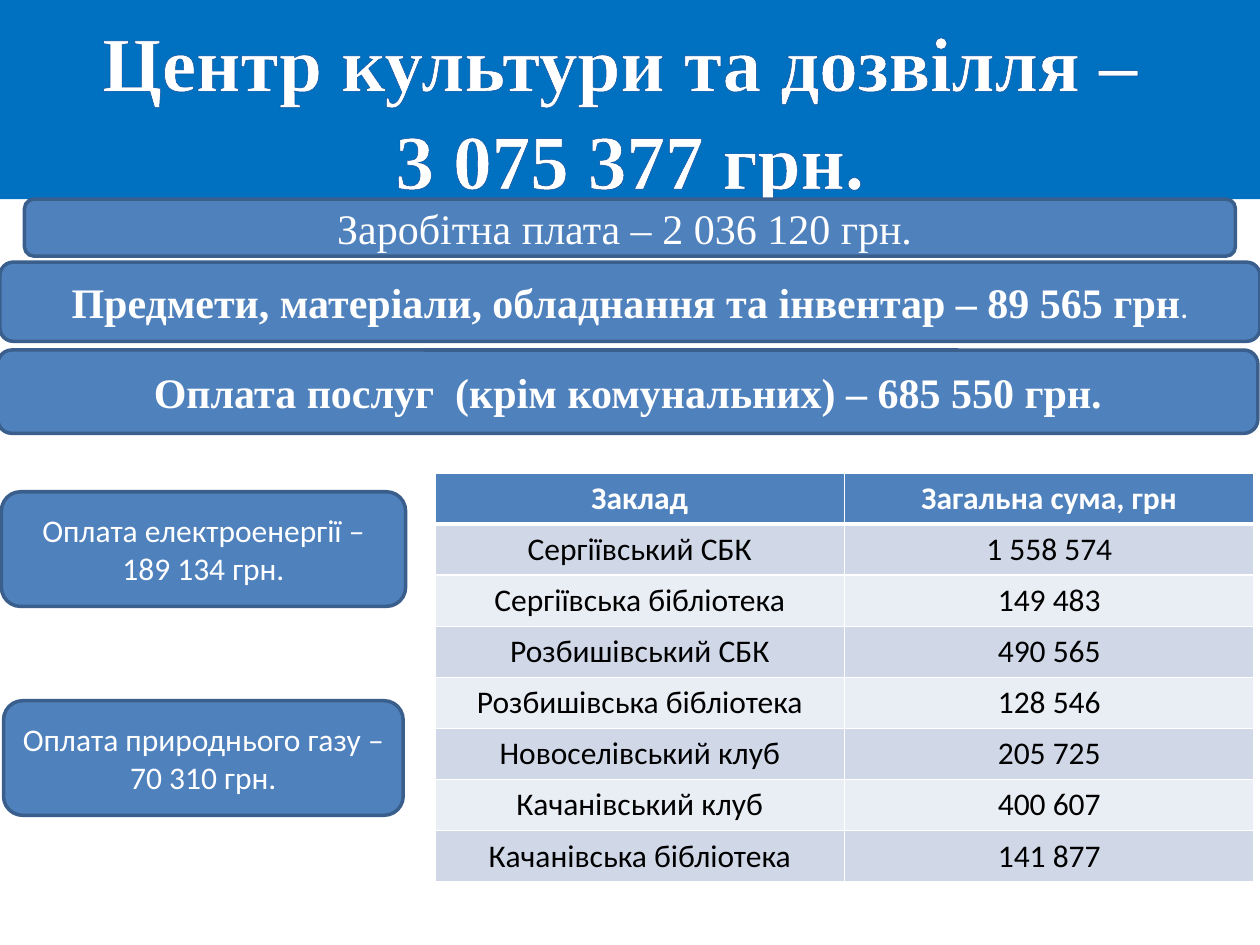
from pptx import Presentation
from pptx.dml.color import RGBColor
from pptx.enum.shapes import MSO_SHAPE
from pptx.enum.text import MSO_ANCHOR, MSO_AUTO_SIZE, PP_ALIGN
from pptx.util import Pt
from lxml.etree import SubElement
from pptx.oxml.ns import qn

SERIF, SANS = "Times New Roman", "Calibri"


class Deck:
    hues = {
        "banner": "0070C0", "box": "4F81BD", "edge": "3A5F8C",
        "white": "FFFFFF", "black": "000000", "rim": "054697",
        "odd": "D0D8E8", "even": "E9EDF4",
    }

    def __init__(self, wide, high):
        self.prs = Presentation()
        self.prs.slide_width, self.prs.slide_height = Pt(wide), Pt(high)
        self.slide = self.prs.slides.add_slide(self.prs.slide_layouts[5])

    def hue(self, name):
        return RGBColor.from_string(self.hues[name])

    def paint(self, item, name):
        item.fill.solid()
        item.fill.fore_color.rgb = self.hue(name)

    def style(self, run, face, size, bold=False, color="white"):
        font = run.font
        font.name, font.size, font.bold = face, Pt(size), bold
        font.color.rgb = self.hue(color)

    def line(self, parent, tag, width, color):
        ln = SubElement(parent, qn(tag), w=str(Pt(width)))
        fill = SubElement(ln, qn("a:solidFill"))
        SubElement(fill, qn("a:srgbClr"), val=self.hues[color])
        return ln

    def title(self, text, high):
        shape = self.slide.shapes.title
        shape.left, shape.top = Pt(0), Pt(0)
        shape.width, shape.height = self.prs.slide_width, Pt(high)
        self.paint(shape, "banner")
        frame = shape.text_frame
        frame.text = text
        frame.word_wrap = True
        frame.auto_size = MSO_AUTO_SIZE.NONE
        frame.vertical_anchor = MSO_ANCHOR.TOP
        frame.margin_top = Pt(5)
        for para in frame.paragraphs:
            para.alignment = PP_ALIGN.CENTER
            para.line_spacing = 1.06
            for run in para.runs:
                self.style(run, SERIF, 44, True)
                props = run.font._element
                props.insert(0, self.line(props, "a:ln", 1, "rim"))

    def box(self, left, top, wide, high, runs):
        shape = self.slide.shapes.add_shape(
            MSO_SHAPE.ROUNDED_RECTANGLE, Pt(left), Pt(top), Pt(wide), Pt(high))
        shape.shadow.inherit = False
        self.paint(shape, "box")
        shape.line.color.rgb = self.hue("edge")
        shape.line.width = Pt(2)
        frame = shape.text_frame
        frame.word_wrap = True
        frame.vertical_anchor = MSO_ANCHOR.MIDDLE
        para = frame.paragraphs[0]
        para.alignment = PP_ALIGN.CENTER
        for text, face, size, bold in runs:
            run = para.add_run()
            run.text = text
            self.style(run, face, size, bold)

    def cell(self, cell, text, row):
        cell.text = text
        para = cell.text_frame.paragraphs[0]
        para.alignment = PP_ALIGN.CENTER
        head = row == 0
        self.style(para.runs[0], SANS, 18, head, "white" if head else "black")
        props = cell._tc.get_or_add_tcPr()
        for side in "LRTB":
            thick = (row, side) in ((0, "B"), (1, "T"))
            self.line(props, "a:ln" + side, 3 if thick else 1, "white")
        self.paint(cell, "box" if head else "odd" if row % 2 else "even")

    def table(self, left, top, wide, step, rows):
        grid = self.slide.shapes.add_table(
            len(rows), len(rows[0]), Pt(left), Pt(top),
            Pt(wide), Pt(step * len(rows))).table
        for r, row in enumerate(rows):
            grid.rows[r].height = Pt(step)
            for c, text in enumerate(row):
                self.cell(grid.cell(r, c), text, r)


def main():
    deck = Deck(720, 540)
    deck.title("Центр культури та дозвілля – \n3 075 377 грн.", 113.8)
    deck.box(14, 113.8, 692, 32.6,
             [("Заробітна плата – 2 036 120 грн. ", SERIF, 24, False)])
    deck.box(0, 149.8, 720, 45.2, [
        ("Предмети, матеріали, обладнання та інвентар – 89 565 грн",
         SERIF, 24, True),
        (".", SANS, 18, False)])
    deck.box(-1.2, 200, 720, 47.6,
             [("Оплата послуг  (крім комунальних) – 685 550 грн.",
               SERIF, 24, True)])
    deck.box(0.8, 281, 231, 65.5,
             [("Оплата електроенергії – 189 134 грн.", SANS, 18, False)])
    deck.box(2, 400.4, 228.4, 65.5,
             [("Оплата природнього газу – 70 310 грн.", SANS, 18, False)])
    deck.table(248.6, 270.3, 468, 29.2, [
        ("Заклад", "Загальна сума, грн"),
        ("Сергіївський СБК", "1 558 574"),
        ("Сергіївська бібліотека", "149 483"),
        ("Розбишівський СБК", "490 565"),
        ("Розбишівська бібліотека", "128 546"),
        ("Новоселівський клуб", "205 725"),
        ("Качанівський клуб", "400 607"),
        ("Качанівська бібліотека", "141 877"),
    ])
    deck.prs.save("out.pptx")


if __name__ == "__main__":
    main()
